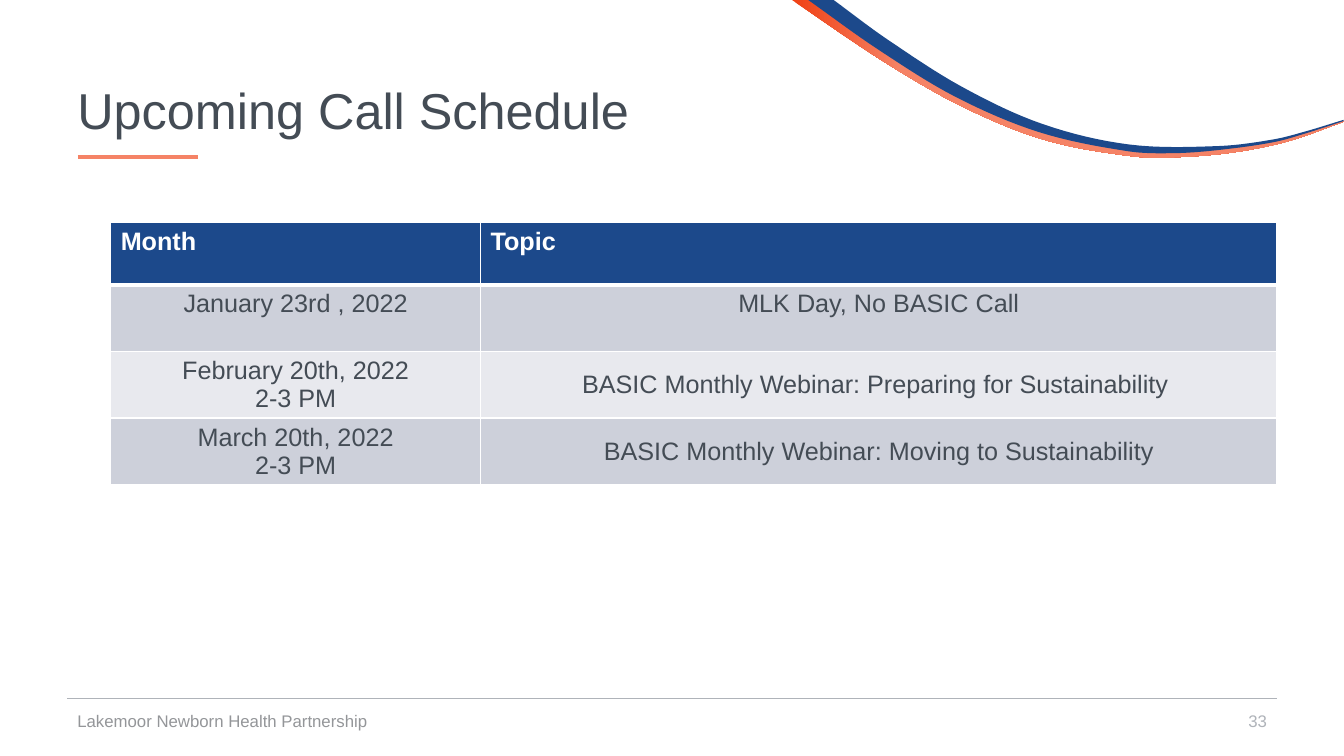
"""Build the upcoming call schedule slide."""
from lxml import etree
from pptx import Presentation
from pptx import util as u
from pptx.dml.color import RGBColor
from pptx.enum import shapes, text
from pptx.oxml import ns

COLORS = {"blue": "1C498B", "coral": "F58366", "red": "F04115", "ink": "444C55",
          "grey": "949699", "light": "AFB3B9", "white": "FFFFFF",
          "band": "CDD0DA", "pale": "E8E9EE"}
ORANGE_TOP = [(20.45, 0), (22.4, 1.37), (24.33, 2.51), (26.39, 3.38), (28.58, 3.81),
              (29.67, 3.86), (31.09, 3.73), (32.44, 3.5), (33.86, 3.05)]
ORANGE_BOTTOM = [(19.96, 0), (22.3, 1.57), (24.26, 2.69), (26.34, 3.53), (28.55, 3.94),
                 (29.69, 3.96), (31.09, 3.84), (32.46, 3.56), (33.86, 3.07)]
BLUE_TOP = [(21.01, 0), (22.33, 0.97), (24.23, 2.18), (26.26, 3.12), (28.45, 3.64),
            (30.71, 3.68), (32.11, 3.51), (32.94, 3.3), (33.86, 3.02)]
BLUE_BOTTOM = [(20.37, 0), (22.12, 1.24), (24.08, 2.44), (26.19, 3.33), (28.42, 3.81),
               (29.57, 3.86), (30.71, 3.78), (32.11, 3.58), (32.94, 3.35), (33.86, 3.05)]
SCHEDULE = [("Month", "Topic"),
            ("January 23rd , 2022", "MLK Day, No BASIC Call"),
            ("February 20th, 2022\n2-3 PM",
             "BASIC Monthly Webinar: Preparing for Sustainability "),
            ("March 20th, 2022\n2-3 PM", "BASIC Monthly Webinar: Moving to Sustainability")]


def rgb(name):
    """Return a palette colour."""
    return RGBColor.from_string(COLORS[name])


def smooth(knots, steps=8):
    """Return points on a cubic Hermite curve through knots that run rightwards."""
    padded = [knots[0], *knots, knots[-1]]
    slopes = [(c[1] - a[1]) / (c[0] - a[0]) for a, c in zip(padded, padded[2:])]
    points = []
    for (x0, y0), (x1, y1), m0, m1 in zip(knots, knots[1:], slopes, slopes[1:]):
        width = x1 - x0
        for i in range(steps):
            t = i / steps
            blend = t * t * (3 - 2 * t)
            bend = t * (1 - t) * width * (m0 * (1 - t) - m1 * t)
            points.append((x0 + t * width, y0 + blend * (y1 - y0) + bend))
    return points + [knots[-1]]


def add_ribbon(s, top, bottom, color, start=None):
    """Draw a curved ribbon, with a gradient if a start colour is given."""
    outline = [(u.Cm(x), u.Cm(y)) for x, y in smooth(top) + smooth(bottom)[::-1]]
    builder = s.shapes.build_freeform(*outline[0])
    builder.add_line_segments(outline[1:], close=True)
    sp = builder.convert_to_shape()
    sp.shadow.inherit = False
    sp.line.fill.background()
    if start:
        sp.fill.gradient()
        sp.fill.gradient_angle = 0
        for stop, name, position in zip(sp.fill.gradient_stops, (start, color), (0, 0.2)):
            stop.color.rgb = rgb(name)
            stop.position = position
    else:
        sp.fill.solid()
        sp.fill.fore_color.rgb = rgb(color)


def add_rule(s, left, right, y, color, width):
    """Draw a horizontal line."""
    line = s.shapes.add_connector(shapes.MSO_CONNECTOR.STRAIGHT,
                                  u.Cm(left), u.Cm(y), u.Cm(right), u.Cm(y))
    line.line.color.rgb = rgb(color)
    line.line.width = u.Pt(width)
    etree.SubElement(line.element.spPr, ns.qn("a:effectLst"))


def format_text(tf, size, color, align, bold=False):
    """Format every paragraph and run of a text frame."""
    for p in tf.paragraphs:
        p.alignment = align
        for r in p.runs:
            r.font.name = "Arial"
            r.font.size = u.Pt(size)
            r.font.bold = bold
            r.font.color.rgb = rgb(color)


def add_text(s, box, content, size, color, align=text.PP_ALIGN.LEFT):
    """Add a vertically centred text box."""
    tf = s.shapes.add_textbox(*map(u.Cm, box)).text_frame
    tf.word_wrap = True
    tf.vertical_anchor = text.MSO_ANCHOR.MIDDLE
    tf.text = content
    format_text(tf, size, color, align)
    return tf


def set_borders(cell, **widths):
    """Give a cell white borders, 1 pt unless a side has its own width."""
    tc_pr = cell._tc.get_or_add_tcPr()
    for i, side in enumerate("LRTB"):
        ln = etree.Element(ns.qn(f"a:ln{side}"), w=str(u.Pt(widths.get(side, 1))))
        fill = etree.SubElement(ln, ns.qn("a:solidFill"))
        etree.SubElement(fill, ns.qn("a:srgbClr"), val=COLORS["white"])
        tc_pr.insert(i, ln)


def add_schedule(s):
    """Add the table of calls."""
    table = s.shapes.add_table(len(SCHEDULE), 2, u.Cm(2.79), u.Cm(5.61),
                               u.Cm(29.39), u.Cm(6.6)).table
    for column, width in zip(table.columns, (9.32, 20.07)):
        column.width = u.Cm(width)
    for i, row in enumerate(SCHEDULE):
        table.rows[i].height = u.Cm(1.67 if i else 1.57)
        for j, content in enumerate(row):
            cell = table.cell(i, j)
            cell.text = content
            cell.fill.solid()
            cell.fill.fore_color.rgb = rgb(("blue", "band", "pale", "band")[i])
            if i > 1:
                cell.vertical_anchor = text.MSO_ANCHOR.MIDDLE
                cell.margin_top = cell.margin_bottom = u.Cm(0.08)
            if i:
                format_text(cell.text_frame, 18, "ink", text.PP_ALIGN.CENTER)
            else:
                format_text(cell.text_frame, 18, "white", text.PP_ALIGN.LEFT, True)
            set_borders(cell, **({"B": 3} if i == 0 else {"T": 3} if i == 1 else {}))


def main():
    """Build and save the slide."""
    prs = Presentation()
    prs.slide_width, prs.slide_height = u.Cm(33.87), u.Cm(19.05)
    s = prs.slides.add_slide(prs.slide_layouts[6])
    add_ribbon(s, ORANGE_TOP, ORANGE_BOTTOM, "coral", start="red")
    add_ribbon(s, BLUE_TOP, BLUE_BOTTOM, "blue")
    add_rule(s, 1.7, 32.18, 17.6, "light", 0.5)
    add_rule(s, 1.96, 5.0, 3.96, "coral", 2.5)
    title = add_text(s, (1.7, 1.02, 30.48, 3.68), "Upcoming Call Schedule", 36, "ink")
    title.paragraphs[0].line_spacing = 0.9
    add_text(s, (24.56, 17.65, 7.62, 1.02), "33", 12, "light", text.PP_ALIGN.RIGHT)
    add_text(s, (1.7, 17.65, 11.43, 1.02), "Lakemoor Newborn Health Partnership",
             12, "grey")
    add_schedule(s)
    prs.save("out.pptx")


if __name__ == "__main__":
    main()
